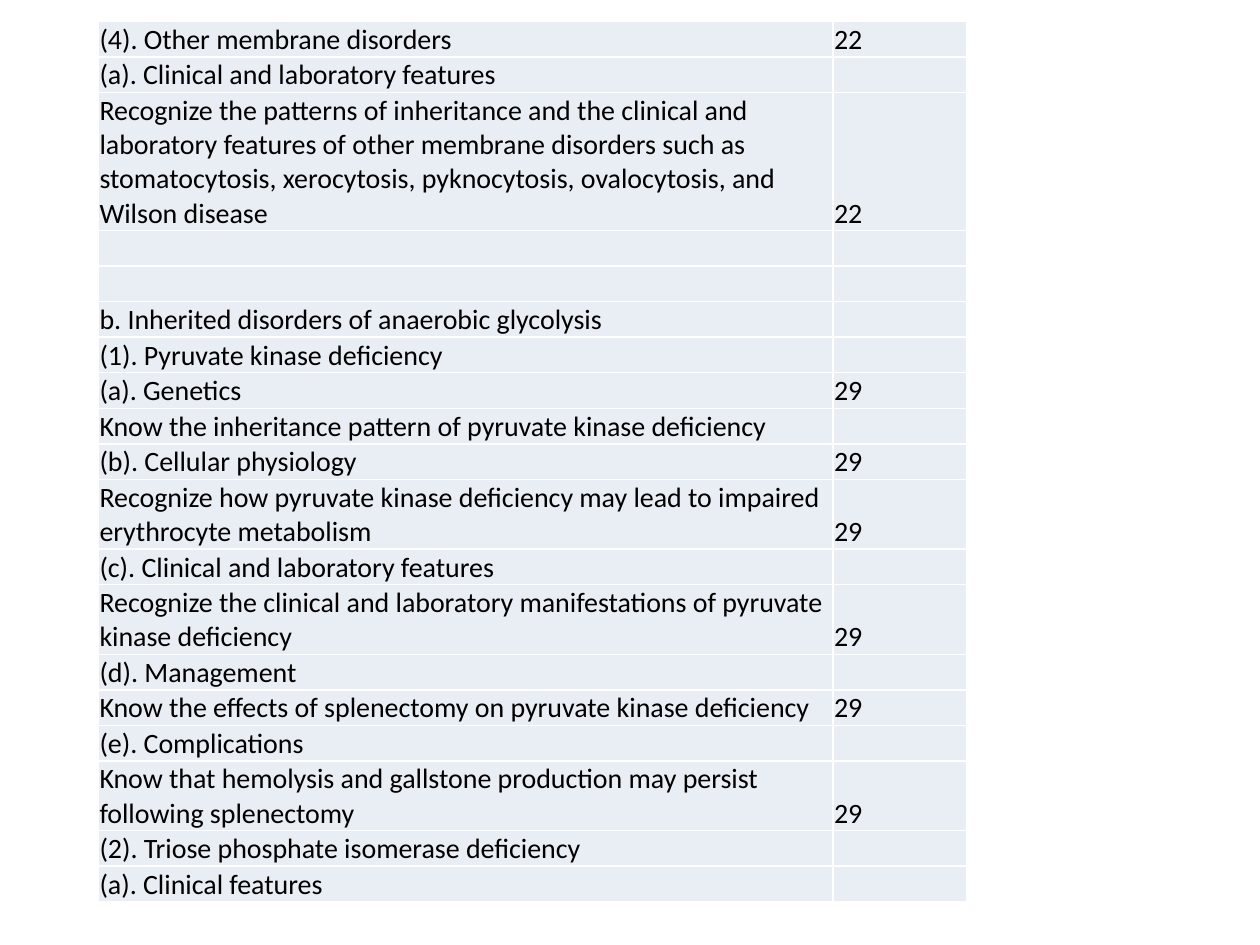
from lxml import etree
from pptx import Presentation
from pptx.dml.color import RGBColor
from pptx.enum import text
from pptx.oxml import ns
from pptx.util import Inches, Pt

COLORS = {"cell": "E9EDF4", "border": "FFFFFF", "text": "000000"}
COL_WIDTHS = (5.83, 1.06)
ROW_HEIGHTS = {1: 0.24, 2: 0.46, 3: 0.69}
FONT, SIZE = "Calibri", 16

TOPICS = [
    ("(4). Other membrane disorders", "22", 1),
    ("(a). Clinical and laboratory features", "", 1),
    ("Recognize the patterns of inheritance and the clinical and laboratory "
     "features of other membrane disorders such as stomatocytosis, xerocytosis, "
     "pyknocytosis, ovalocytosis, and Wilson disease", "22", 3),
    ("", "", 1),
    ("", "", 1),
    ("b. Inherited disorders of anaerobic glycolysis", "", 1),
    ("(1). Pyruvate kinase deficiency", "", 1),
    ("(a). Genetics", "29", 1),
    ("Know the inheritance pattern of pyruvate kinase deficiency", "", 1),
    ("(b). Cellular physiology", "29", 1),
    ("Recognize how pyruvate kinase deficiency may lead to impaired "
     "erythrocyte metabolism", "29", 2),
    ("(c). Clinical and laboratory features", "", 1),
    ("Recognize the clinical and laboratory manifestations of pyruvate "
     "kinase deficiency", "29", 2),
    ("(d). Management", "", 1),
    ("Know the effects of splenectomy on pyruvate kinase deficiency", "29", 1),
    ("(e). Complications", "", 1),
    ("Know that hemolysis and gallstone production may persist "
     "following splenectomy", "29", 2),
    ("(2). Triose phosphate isomerase deficiency", "", 1),
    ("(a). Clinical features", "", 1),
]


def add_borders(cell):
    tcPr = cell._tc.get_or_add_tcPr()
    for i, side in enumerate(("lnL", "lnR", "lnT", "lnB")):
        ln = etree.Element(ns.qn(f"a:{side}"), w=str(Pt(1)))
        fill = etree.SubElement(ln, ns.qn("a:solidFill"))
        etree.SubElement(fill, ns.qn("a:srgbClr"), val=COLORS["border"])
        tcPr.insert(i, ln)


def fill_cell(cell, value):
    cell.fill.solid()
    cell.fill.fore_color.rgb = RGBColor.from_string(COLORS["cell"])
    add_borders(cell)
    cell.vertical_anchor = text.MSO_ANCHOR.BOTTOM
    cell.margin_left = cell.margin_right = cell.margin_top = Inches(0.01)
    cell.margin_bottom = 0
    p = cell.text_frame.paragraphs[0]
    p.text = value
    for r in p.runs:
        r.font.name = FONT
        r.font.size = Pt(SIZE)
        r.font.color.rgb = RGBColor.from_string(COLORS["text"])
    if not value:
        etree.SubElement(p._p, ns.qn("a:endParaRPr"), sz=str(SIZE * 100))


def main():
    prs = Presentation()
    prs.slide_width, prs.slide_height = Inches(10), Inches(7.5)
    s = prs.slides.add_slide(prs.slide_layouts[6])
    frame = s.shapes.add_table(len(TOPICS), len(COL_WIDTHS), Inches(0.78),
                               Inches(0.17), Inches(sum(COL_WIDTHS)), Inches(6.86))
    table = frame.table
    table.first_row = table.horz_banding = False
    for col, width in zip(table.columns, COL_WIDTHS):
        col.width = Inches(width)
    for row, (topic, page, lines) in zip(table.rows, TOPICS):
        row.height = Inches(ROW_HEIGHTS[lines])
        for cell, value in zip(row.cells, (topic, page)):
            fill_cell(cell, value)
    frame.height = Inches(6.86)
    prs.save("out.pptx")


if __name__ == "__main__":
    main()
